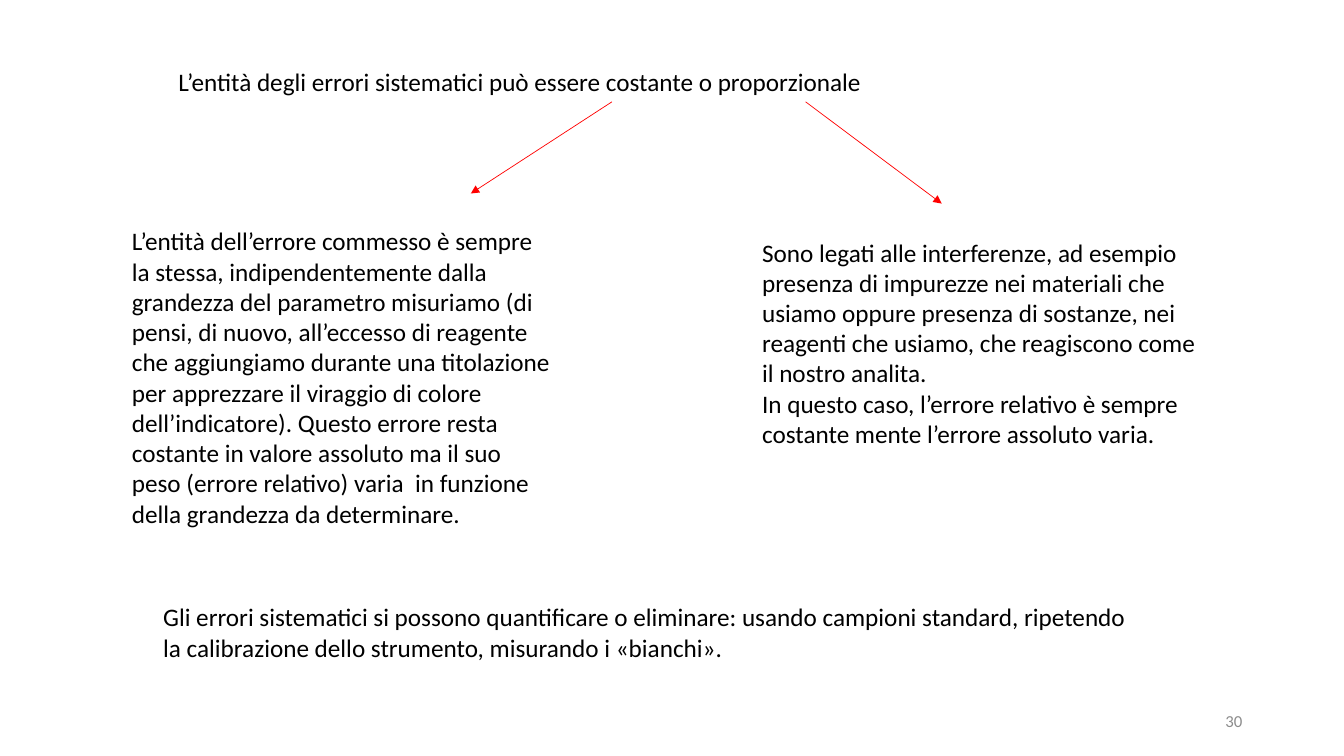
import pptx
import pptx.util
import pptx.dml.color
import pptx.enum.shapes
import pptx.enum.text
import pptx.oxml.ns
import lxml.etree

Inches = pptx.util.Inches
Align = pptx.enum.text.PP_ALIGN
Anchor = pptx.enum.text.MSO_ANCHOR

COLORS = {"text": "000000", "number": "8C8C8C", "arrow": "FF0000"}
FONT = "Calibri"

# Content: box (left, top, width, height) and its paragraphs
statements = [
    ((1.67, 0.61, 7.66, 0.4),
     ["L’entità degli errori sistematici può essere costante o proporzionale"]),
    ((1.21, 2.19, 4.37, 3.13),
     ["L’entità dell’errore commesso è sempre la stessa, indipendentemente dalla "
      "grandezza del parametro misuriamo (di pensi, di nuovo, all’eccesso di reagente "
      "che aggiungiamo durante una titolazione per apprezzare il viraggio di colore "
      "dell’indicatore). Questo errore resta costante in valore assoluto ma il suo "
      "peso (errore relativo) varia  in funzione della grandezza da determinare."]),
    ((7.46, 2.3, 4.55, 2.22),
     ["Sono legati alle interferenze, ad esempio presenza di impurezze nei materiali "
      "che usiamo oppure presenza di sostanze, nei reagenti che usiamo, che reagiscono "
      "come il nostro analita.",
      "In questo caso, l’errore relativo è sempre costante mente l’errore assoluto varia."]),
    ((1.52, 5.92, 9.83, 0.71),
     ["Gli errori sistematici si possono quantificare o eliminare: usando campioni "
      "standard, ripetendo la calibrazione dello strumento, misurando i «bianchi»."]),
]
page_number = ((9.42, 6.95, 3, 0.4), ["30"])

# Arrows from "costante" and "proporzionale" to their explanations
arrows = [((6.07, 1.01), (4.67, 1.92)), ((7.99, 1.01), (9.34, 2.02))]


def rgb(name):
    return pptx.dml.color.RGBColor.from_string(COLORS[name])


def add_text(slide, box, paragraphs, size=18, color="text",
             align=Align.LEFT, anchor=Anchor.TOP):
    frame = slide.shapes.add_textbox(*map(Inches, box)).text_frame
    frame.word_wrap = True
    frame.vertical_anchor = anchor
    for index, wording in enumerate(paragraphs):
        paragraph = frame.add_paragraph() if index else frame.paragraphs[0]
        paragraph.alignment = align
        run = paragraph.add_run()
        run.text = wording
        run.font.name = FONT
        run.font.size = pptx.util.Pt(size)
        run.font.color.rgb = rgb(color)


def add_arrow(slide, start, end):
    arrow = slide.shapes.add_connector(
        pptx.enum.shapes.MSO_CONNECTOR.STRAIGHT, *map(Inches, start + end))
    arrow.line.color.rgb = rgb("arrow")
    arrow.line.width = pptx.util.Pt(0.5)
    # Arrowhead, and no shadow
    qn = pptx.oxml.ns.qn
    lxml.etree.SubElement(arrow.line._get_or_add_ln(), qn("a:tailEnd"), type="triangle")
    lxml.etree.SubElement(arrow._element.spPr, qn("a:effectLst"))


def main():
    deck = pptx.Presentation()
    deck.slide_width, deck.slide_height = Inches(13.33), Inches(7.5)
    slide = deck.slides.add_slide(deck.slide_layouts[6])

    for box, paragraphs in statements:
        add_text(slide, box, paragraphs)
    for start, end in arrows:
        add_arrow(slide, start, end)
    add_text(slide, *page_number, size=12, color="number",
             align=Align.RIGHT, anchor=Anchor.MIDDLE)

    deck.save("out.pptx")


if __name__ == "__main__":
    main()
